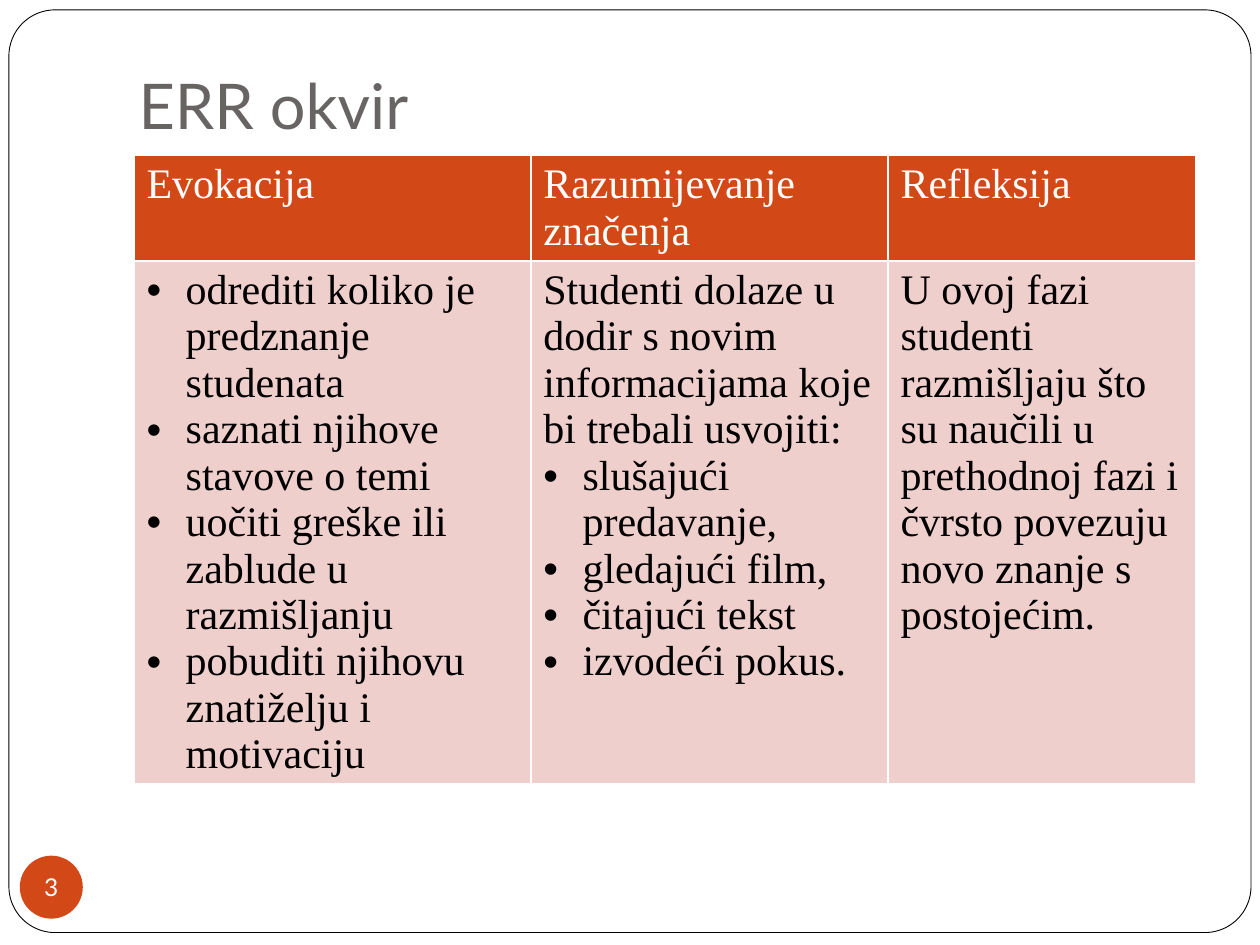
import pptx
import pptx.dml.color
import pptx.enum.shapes
import pptx.enum.text
import pptx.oxml
import pptx.oxml.ns
import pptx.util

Cm = pptx.util.Cm
Pt = pptx.util.Pt
ACCENT = "D34817"
BULLET = "• "
PHASES = [
    ("Evokacija", [
        "• odrediti koliko je predznanje studenata",
        "• saznati njihove stavove o temi",
        "• uočiti greške ili zablude u razmišljanju",
        "• pobuditi njihovu znatiželju i motivaciju",
    ]),
    ("Razumijevanje značenja", [
        "Studenti dolaze u dodir s novim informacijama koje bi trebali usvojiti:",
        "• slušajući predavanje,",
        "• gledajući film,",
        "• čitajući tekst",
        "• izvodeći pokus.",
    ]),
    ("Refleksija", [
        "U ovoj fazi studenti razmišljaju što su naučili u prethodnoj fazi "
        "i čvrsto povezuju novo znanje s postojećim.",
    ]),
]


def rgb(code):
    return pptx.dml.color.RGBColor.from_string(code)


def xml(tag, attributes="", content=""):
    namespace = pptx.oxml.ns.nsdecls("a")
    return pptx.oxml.parse_xml(f"<a:{tag} {namespace} {attributes}>{content}</a:{tag}>")


def style(paragraph, font, size, color):
    for run in paragraph.runs:
        run.font.name = font
        run.font.size = Pt(size)
        run.font.bold = False
        run.font.color.rgb = rgb(color)


def place_title(title, left, top, width, height):
    title.left, title.top = Cm(left), Cm(top)
    title.width, title.height = Cm(width), Cm(height)
    frame = title.text_frame
    frame.text = "ERR okvir"
    frame.auto_size = pptx.enum.text.MSO_AUTO_SIZE.NONE
    frame.vertical_anchor = pptx.enum.text.MSO_ANCHOR.BOTTOM
    frame.margin_bottom = Cm(0.25)
    heading = frame.paragraphs[0]
    heading.alignment = pptx.enum.text.PP_ALIGN.LEFT
    style(heading, "Lato", 36, "696464")


def place_border(slide, left, top, width, height):
    border = slide.shapes.add_shape(
        pptx.enum.shapes.MSO_SHAPE.ROUNDED_RECTANGLE,
        Cm(left), Cm(top), Cm(width), Cm(height))
    border.adjustments[0] = 0.05
    border.shadow.inherit = False
    border.fill.solid()
    border.fill.fore_color.rgb = rgb("FFFFFF")
    border.line.color.rgb = rgb("000000")
    border.line.width = Pt(0.5)
    slide.shapes.title.element.addprevious(border.element)


def place_page_number(slide, left, top, size):
    badge = slide.shapes.add_shape(
        pptx.enum.shapes.MSO_SHAPE.OVAL, Cm(left), Cm(top), Cm(size), Cm(size))
    badge.shadow.inherit = False
    badge.fill.solid()
    badge.fill.fore_color.rgb = rgb(ACCENT)
    badge.line.fill.background()
    frame = badge.text_frame
    frame.margin_left = frame.margin_right = frame.margin_top = frame.margin_bottom = 0
    frame.word_wrap = False
    frame.vertical_anchor = pptx.enum.text.MSO_ANCHOR.MIDDLE
    frame.text = "3"
    number = frame.paragraphs[0]
    number.alignment = pptx.enum.text.PP_ALIGN.CENTER
    style(number, "Lato", 14, "FFFFFF")


def add_bullet(paragraph):
    properties = paragraph._p.get_or_add_pPr()
    indent = Cm(0.79)
    properties.set("marL", str(indent))
    properties.set("indent", str(-indent))
    properties.append(xml("buFont", 'typeface="Arial"'))
    properties.append(xml("buChar", 'char="•"'))


def fill_cell(cell, lines, fill, color):
    properties = cell._tc.get_or_add_tcPr()
    for side in "LRTB":
        properties.append(xml(
            f"ln{side}", f'w="{Pt(1)}"',
            '<a:solidFill><a:srgbClr val="FFFFFF"/></a:solidFill>'))
    cell.fill.solid()
    cell.fill.fore_color.rgb = rgb(fill)
    cell.text_frame.text = "\n".join(line.removeprefix(BULLET) for line in lines)
    for line, paragraph in zip(lines, cell.text_frame.paragraphs):
        style(paragraph, "Times New Roman", 24, color)
        if line.startswith(BULLET):
            add_bullet(paragraph)


def place_phases(slide, left, top, widths, heights):
    table = slide.shapes.add_table(
        len(heights), len(widths), Cm(left), Cm(top),
        Cm(sum(widths)), Cm(sum(heights))).table
    table.horz_banding = False
    for row, height in zip(table.rows, heights):
        row.height = Cm(height)
    for index, (phase, details) in enumerate(PHASES):
        table.columns[index].width = Cm(widths[index])
        fill_cell(table.cell(0, index), [phase], ACCENT, "FFFFFF")
        fill_cell(table.cell(1, index), details, "EFCFCC", "000000")


def main():
    presentation = pptx.Presentation()
    presentation.slide_width, presentation.slide_height = Cm(25.4), Cm(19.05)
    slide = presentation.slides.add_slide(presentation.slide_layouts[5])
    place_border(slide, 0.18, 0.2, 25.04, 18.6)
    place_title(slide.shapes.title, 2.54, 0.76, 21.59, 2.36)
    place_page_number(slide, 0.4, 17.25, 1.27)
    place_phases(slide, 2.7, 3.13, [8, 7.2, 6.2], [2.1, 10.54])
    presentation.save("out.pptx")


if __name__ == "__main__":
    main()
